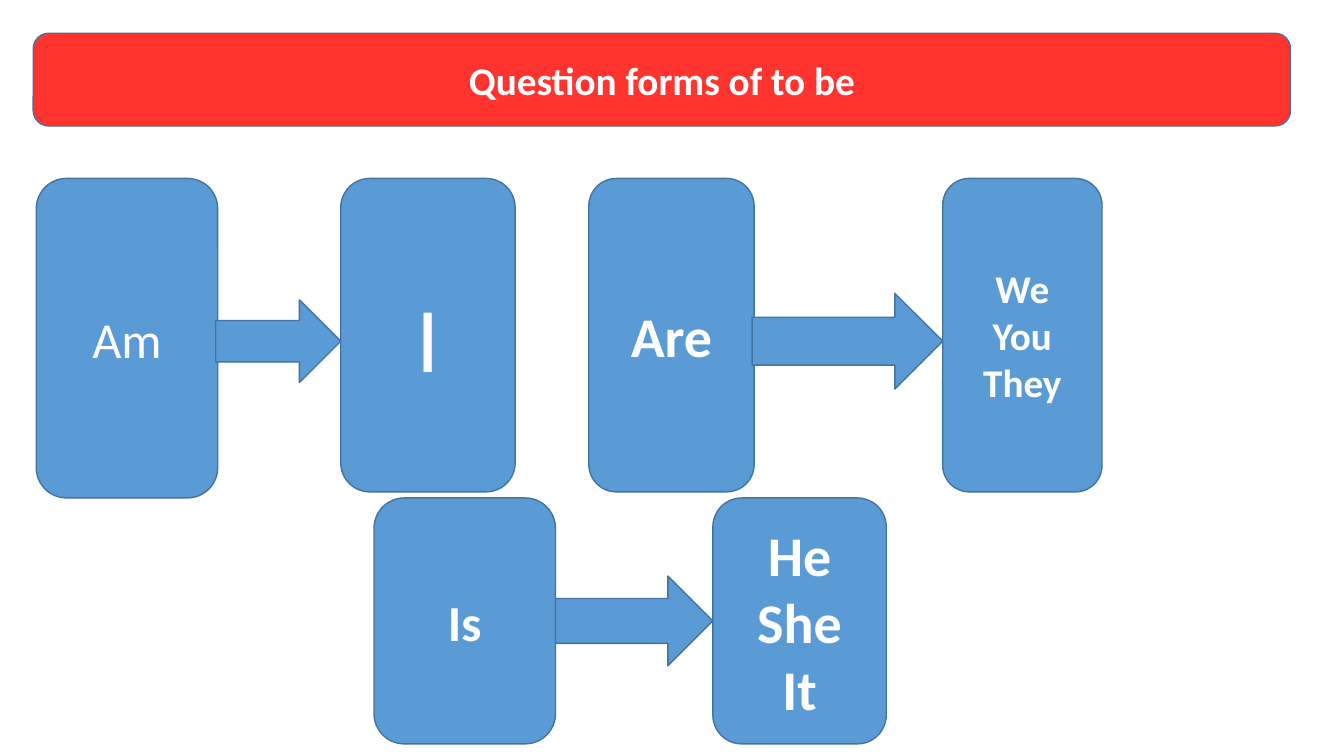
import pptx
import pptx.util
import pptx.dml.color
import pptx.enum.shapes
import pptx.enum.text

Inches = pptx.util.Inches
SHAPES = pptx.enum.shapes.MSO_SHAPE
BLUE, RED, OUTLINE, WHITE = "5B9BD5", "FF342F", "43739E", "FFFFFF"


def color(value):
    return pptx.dml.color.RGBColor.from_string(value)


def add_block(slide, kind, box, fill):
    sp = slide.shapes.add_shape(kind, *(Inches(v) for v in box))
    sp.shadow.inherit = False
    sp.fill.solid()
    sp.fill.fore_color.rgb = color(fill)
    sp.line.color.rgb = color(OUTLINE)
    sp.line.width = pptx.util.Pt(1)
    return sp


def add_card(slide, box, lines, size, bold=True, fill=BLUE):
    sp = add_block(slide, SHAPES.ROUNDED_RECTANGLE, box, fill)
    tf = sp.text_frame
    tf.word_wrap = True
    tf.vertical_anchor = pptx.enum.text.MSO_ANCHOR.MIDDLE
    font = {"name": "Calibri", "size": pptx.util.Pt(size), "bold": bold}
    for i, text in enumerate(lines):
        p = tf.paragraphs[0] if i == 0 else tf.add_paragraph()
        p.alignment = pptx.enum.text.PP_ALIGN.CENTER
        r = p.add_run()
        r.text = text
        for key, value in font.items():
            setattr(r.font, key, value)
        r.font.color.rgb = color(WHITE)


def add_title(slide, box):
    add_card(slide, box, ["Question forms of to be"], 28, fill=RED)


def add_pair(slide, box, verb, arrow, pronouns):
    left, top, width, height = box
    verb_width, verb_height = verb["size"]
    arrow_width, arrow_height = arrow["size"]
    pronoun_left = left + width - pronouns["width"]
    arrow_top = top + height / 2 + arrow["drop"] - arrow_height / 2
    add_card(slide, (left, top, verb_width, verb_height), **verb["text"])
    add_block(slide, SHAPES.RIGHT_ARROW,
              (pronoun_left - arrow_width, arrow_top, arrow_width, arrow_height), BLUE)
    add_card(slide, (pronoun_left, top, pronouns["width"], height), **pronouns["text"])


PAIRS = [
    ((0.36, 1.77, 4.75, 3.11),
     {"size": (1.8, 3.17), "text": {"lines": ["Am"], "size": 36, "bold": False}},
     {"size": (1.24, 0.82), "drop": 0.06},
     {"width": 1.73, "text": {"lines": ["I"], "size": 66, "bold": False}}),
    ((5.84, 1.77, 5.09, 3.11),
     {"size": (1.64, 3.11), "text": {"lines": ["Are"], "size": 40}},
     {"size": (1.89, 0.95), "drop": 0.06},
     {"width": 1.58, "text": {"lines": ["We", "You", "They"], "size": 28}}),
    ((3.71, 4.94, 5.08, 2.44),
     {"size": (1.8, 2.44), "text": {"lines": ["Is"], "size": 36}},
     {"size": (1.56, 0.89), "drop": 0},
     {"width": 1.72, "text": {"lines": ["He", "She", "It"], "size": 40}}),
]


def main():
    prs = pptx.Presentation()
    prs.slide_width, prs.slide_height = Inches(13.33), Inches(7.5)
    slide = prs.slides.add_slide(prs.slide_layouts[6])
    add_title(slide, (0.33, 0.33, 12.47, 0.92))
    for box, verb, arrow, pronouns in PAIRS:
        add_pair(slide, box, verb, arrow, pronouns)
    prs.save("out.pptx")


if __name__ == "__main__":
    main()
